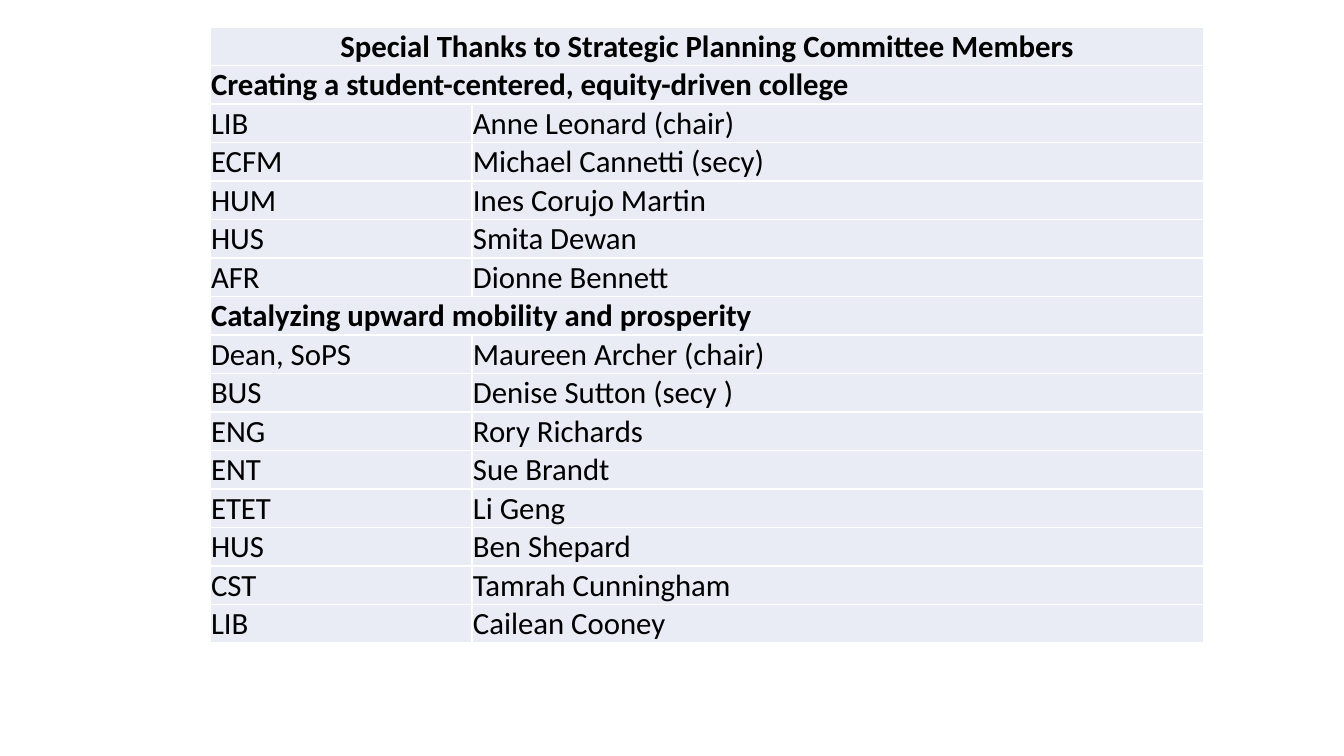
"""Build the committee thank-you slide as a single table."""
from dataclasses import dataclass

from lxml import etree
from pptx import Presentation
from pptx.dml.color import RGBColor
from pptx.enum.text import MSO_ANCHOR, PP_ALIGN
from pptx.oxml.ns import qn
from pptx.util import Emu, Pt

MIDDLE, BOTTOM = MSO_ANCHOR.MIDDLE, MSO_ANCHOR.BOTTOM
LEFT, CENTER = PP_ALIGN.LEFT, PP_ALIGN.CENTER


@dataclass(frozen=True)
class Theme:
    font: str = "Calibri"
    size: int = 22
    text: str = "000000"
    fill: str = "E9EBF5"
    border: str = "FFFFFF"
    border_pt: int = 1


THEME = Theme()
TITLE = "Special Thanks to Strategic Planning Committee Members"
GROUPS = [
    ("Creating a student-centered, equity-driven college", BOTTOM, [
        ("LIB", "Anne Leonard (chair)"),
        ("ECFM", "Michael Cannetti (secy)"),
        ("HUM", "Ines Corujo Martin"),
        ("HUS", "Smita Dewan"),
        ("AFR", "Dionne Bennett"),
    ]),
    ("Catalyzing upward mobility and prosperity", MIDDLE, [
        ("Dean, SoPS", "Maureen Archer (chair)"),
        ("BUS", "Denise Sutton (secy )"),
        ("ENG", "Rory Richards"),
        ("ENT", "Sue Brandt"),
        ("ETET", "Li Geng"),
        ("HUS", "Ben Shepard"),
        ("CST", "Tamrah Cunningham"),
        ("LIB", "Cailean Cooney"),
    ]),
]
COLUMNS = (262, 732)
ROW_HEIGHT = 38


def px(n):
    return Emu(round(n * 914400 / 100.8))


def style_cell(cell, text, bold, align, anchor):
    cell.margin_left = cell.margin_right = cell.margin_top = px(1)
    cell.margin_bottom = 0
    cell.vertical_anchor = anchor
    tcPr = cell._tc.get_or_add_tcPr()
    for side in ("lnL", "lnR", "lnT", "lnB"):
        ln = etree.SubElement(tcPr, qn(f"a:{side}"), w=str(Pt(THEME.border_pt)))
        line_fill = etree.SubElement(ln, qn("a:solidFill"))
        etree.SubElement(line_fill, qn("a:srgbClr"), val=THEME.border)
    cell.fill.solid()
    cell.fill.fore_color.rgb = RGBColor.from_string(THEME.fill)
    p = cell.text_frame.paragraphs[0]
    p.text = text
    p.alignment = align
    p.font.name = THEME.font
    p.font.size = Pt(THEME.size)
    p.font.bold = bold
    p.font.color.rgb = RGBColor.from_string(THEME.text)


rows = [((TITLE, ""), True, CENTER, MIDDLE)]
for heading, anchor, members in GROUPS:
    rows.append(((heading, ""), True, LEFT, anchor))
    rows += [(member, False, LEFT, MIDDLE) for member in members]

prs = Presentation()
prs.slide_width, prs.slide_height = px(1344), px(756)
s = prs.slides.add_slide(prs.slide_layouts[6])

table = s.shapes.add_table(
    len(rows), len(COLUMNS), px(210), px(27), px(sum(COLUMNS)), px(len(rows) * ROW_HEIGHT)
).table
table.first_row = table.horz_banding = False
for column, width in zip(table.columns, COLUMNS):
    column.width = px(width)

for i, (texts, heading, align, anchor) in enumerate(rows):
    table.rows[i].height = px(ROW_HEIGHT)
    for j, text in enumerate(texts):
        style_cell(table.cell(i, j), text, heading, align, anchor)
    if heading:
        table.cell(i, 0).merge(table.cell(i, 1))

prs.save("out.pptx")
